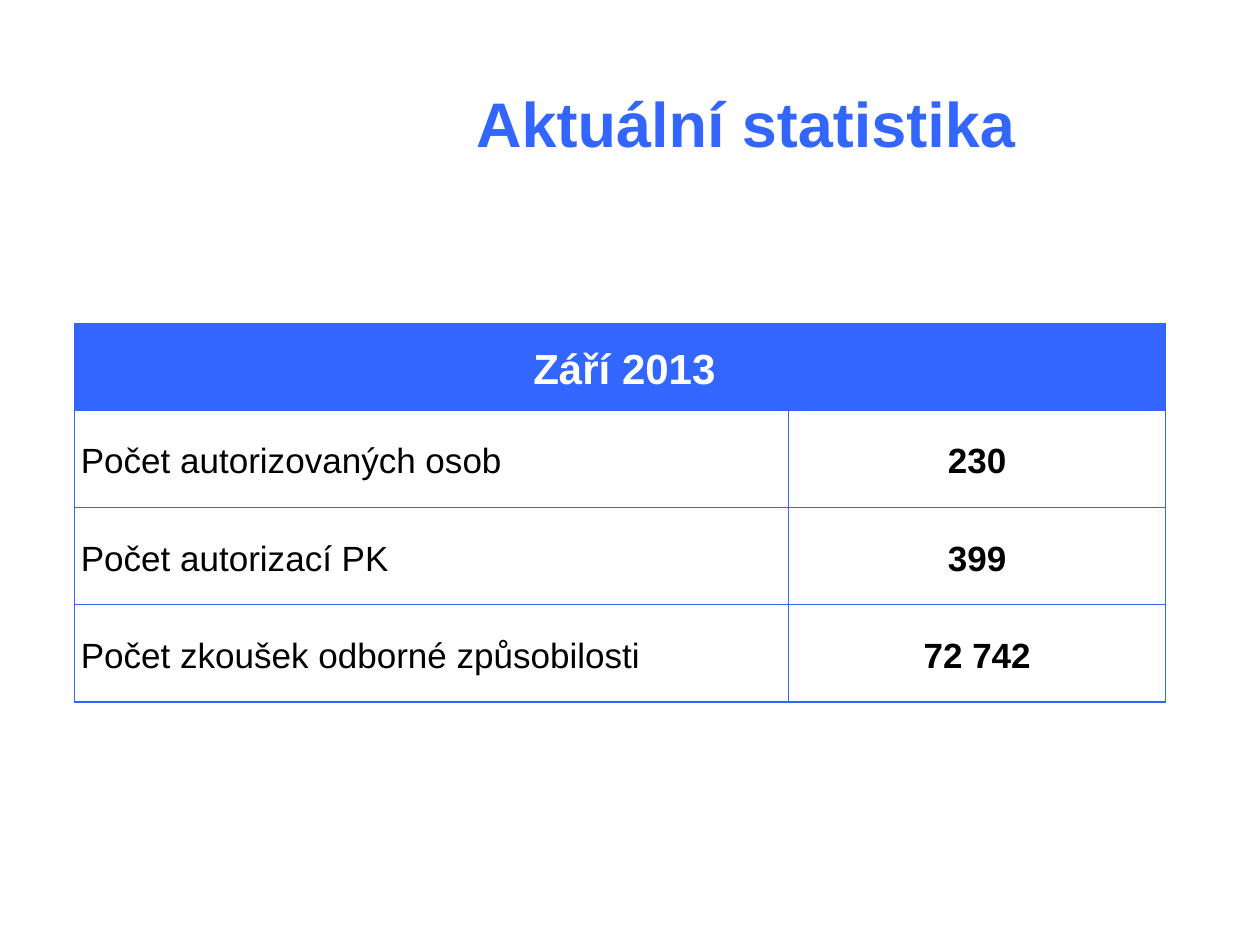
from lxml.etree import SubElement
from pptx import Presentation
from pptx.dml.color import RGBColor
from pptx.enum.text import MSO_ANCHOR, PP_ALIGN
from pptx.oxml.ns import qn
from pptx.util import Cm, Pt

BLUE, BLACK, WHITE = "3366FF", "000000", "FFFFFF"
PERIOD = "Září 2013"
STATISTICS = [
    ("Počet autorizovaných osob", "230"),
    ("Počet autorizací PK", "399"),
    ("Počet zkoušek odborné způsobilosti", "72 742"),
]


def color(hex_code):
    return RGBColor.from_string(hex_code)


def write(paragraph, text, *, size=20, ink=BLACK, bold=False,
          align=PP_ALIGN.LEFT, spacing=None):
    paragraph.alignment = align
    paragraph.line_spacing = spacing
    run = paragraph.add_run()
    run.text = text
    run.font.name = "Arial"
    run.font.size = Pt(size)
    run.font.bold = bold
    run.font.color.rgb = color(ink)


def add_title(slide):
    title = slide.shapes.add_textbox(Cm(5.1), Cm(0.76), Cm(20.3), Cm(3.18))
    frame = title.text_frame
    frame.word_wrap = True
    frame.vertical_anchor = MSO_ANCHOR.MIDDLE
    heading = frame.paragraphs[0]
    write(heading, "Aktuální statistika", size=36, ink=BLUE, bold=True,
          align=PP_ALIGN.CENTER)
    write(heading, " ", size=44, ink="00A9E2", align=PP_ALIGN.CENTER)


def add_borders(cell):
    properties = cell._tc.get_or_add_tcPr()
    for side in ("lnL", "lnR", "lnT", "lnB"):
        line = SubElement(properties, qn(f"a:{side}"), w=str(Pt(1)))
        fill = SubElement(line, qn("a:solidFill"))
        SubElement(fill, qn("a:srgbClr"), val=BLUE)


def style_cell(cell, fill=None):
    cell.margin_left = cell.margin_right = Cm(0.13)
    cell.margin_top = cell.margin_bottom = 0
    cell.vertical_anchor = MSO_ANCHOR.MIDDLE
    # Borders must precede the fill in the cell properties
    add_borders(cell)
    if fill:
        cell.fill.solid()
        cell.fill.fore_color.rgb = color(fill)
    else:
        cell.fill.background()


def add_statistics(slide):
    table = slide.shapes.add_table(
        len(STATISTICS) + 1, 2, Cm(1.5), Cm(6.52), Cm(22), Cm(7.6)).table
    for column, width in zip(table.columns, (14.4, 7.6)):
        column.width = Cm(width)
    for index, row in enumerate(table.rows):
        row.height = Cm(1.96 if index else 1.75)
        for cell in row.cells:
            style_cell(cell, None if index else BLUE)

    # Header across both columns
    header = table.cell(0, 0)
    header.merge(table.cell(0, 1))
    for text, size in ((" ", 18), (PERIOD, 24)):
        write(header.text_frame.paragraphs[0], text, size=size, ink=WHITE,
              bold=True, align=PP_ALIGN.CENTER, spacing=1.15)

    # Labels and counts
    for index, (label, count) in enumerate(STATISTICS, start=1):
        label_cell, count_cell = table.rows[index].cells
        write(label_cell.text_frame.paragraphs[0], label, spacing=1.15)
        write(count_cell.text_frame.paragraphs[0], count, bold=True,
              align=PP_ALIGN.CENTER, spacing=1.15)


def main():
    presentation = Presentation()
    presentation.slide_width = Cm(25.4)
    presentation.slide_height = Cm(19.05)
    slide = presentation.slides.add_slide(presentation.slide_layouts[6])
    add_title(slide)
    add_statistics(slide)
    presentation.save("out.pptx")


if __name__ == "__main__":
    main()
